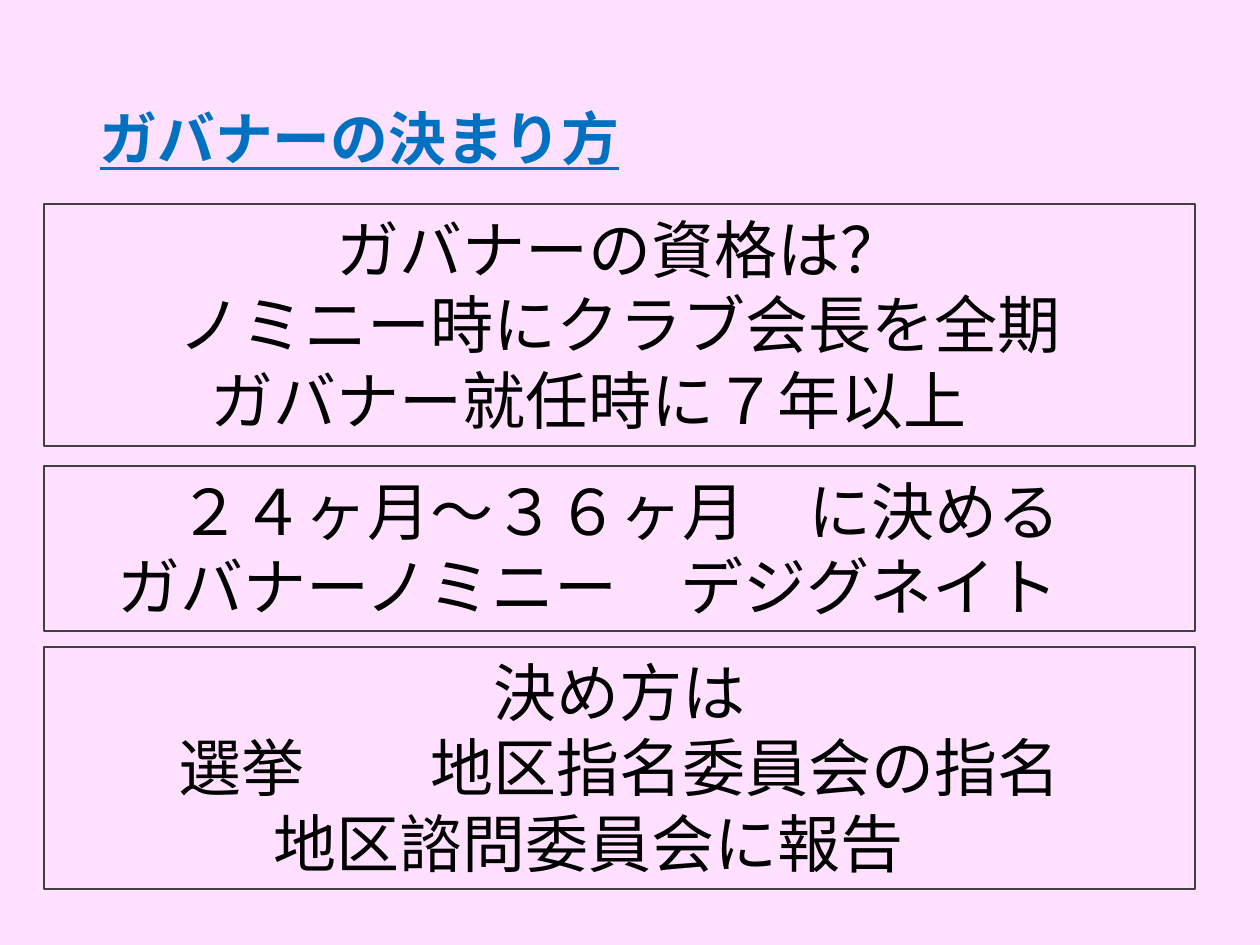
from pptx import Presentation
from pptx import util as u
from pptx.dml import color
from pptx.enum import shapes, text

PINK = color.RGBColor(0xFF, 0xE1, 0xFF)
BLUE = color.RGBColor(0x00, 0x70, 0xC0)
GREY = color.RGBColor(0x40, 0x40, 0x40)
BLACK = color.RGBColor(0x00, 0x00, 0x00)
FONT = "Calibri"
PX = 914400 / 126

PANELS = [
    ((44, 204, 1151, 242), [
        "ガバナーの資格は？",
        "ノミニー時にクラブ会長を全期",
        "ガバナー就任時に７年以上　",
    ]),
    ((44, 466, 1151, 165), [
        "２４ヶ月～３６ヶ月　に決める",
        "ガバナーノミニー　デジグネイト　",
    ]),
    ((44, 647, 1151, 242), [
        "決め方は",
        "選挙　　地区指名委員会の指名",
        "地区諮問委員会に報告　",
    ]),
]


def px(length):
    return u.Emu(round(length * PX))


def style_run(span, size, colour):
    span.font.name = FONT
    span.font.size = u.Pt(size)
    span.font.color.rgb = colour


def add_title(page, bounds, wording):
    title = page.shapes.title
    title.left, title.top, title.width, title.height = map(px, bounds)
    frame = title.text_frame
    frame.text = wording
    frame.word_wrap = True
    frame.auto_size = text.MSO_AUTO_SIZE.NONE
    frame.vertical_anchor = text.MSO_ANCHOR.MIDDLE
    para = frame.paragraphs[0]
    para.alignment = text.PP_ALIGN.LEFT
    para.line_spacing = 0.9
    span = para.runs[0]
    style_run(span, 33, BLUE)
    span.font.bold = True
    span.font.underline = True


def add_panel(page, bounds, lines):
    box = page.shapes.add_shape(shapes.MSO_SHAPE.RECTANGLE, *map(px, bounds))
    box.shadow.inherit = False
    box.fill.background()
    box.line.color.rgb = GREY
    box.line.width = u.Pt(0.75)
    frame = box.text_frame
    frame.text = "\n".join(lines)
    frame.word_wrap = True
    frame.auto_size = text.MSO_AUTO_SIZE.SHAPE_TO_FIT_TEXT
    frame.vertical_anchor = text.MSO_ANCHOR.TOP
    for para in frame.paragraphs:
        para.alignment = text.PP_ALIGN.CENTER
        style_run(para.runs[0], 36, BLACK)


def main():
    deck = Presentation()
    deck.slide_width, deck.slide_height = px(1260), px(945)
    page = deck.slides.add_slide(deck.slide_layouts.get_by_name("Title Only"))
    page.background.fill.solid()
    page.background.fill.fore_color.rgb = PINK
    add_title(page, (87, 50, 1086, 183), "ガバナーの決まり方")
    for bounds, lines in PANELS:
        add_panel(page, bounds, lines)
    deck.save("out.pptx")


if __name__ == "__main__":
    main()
